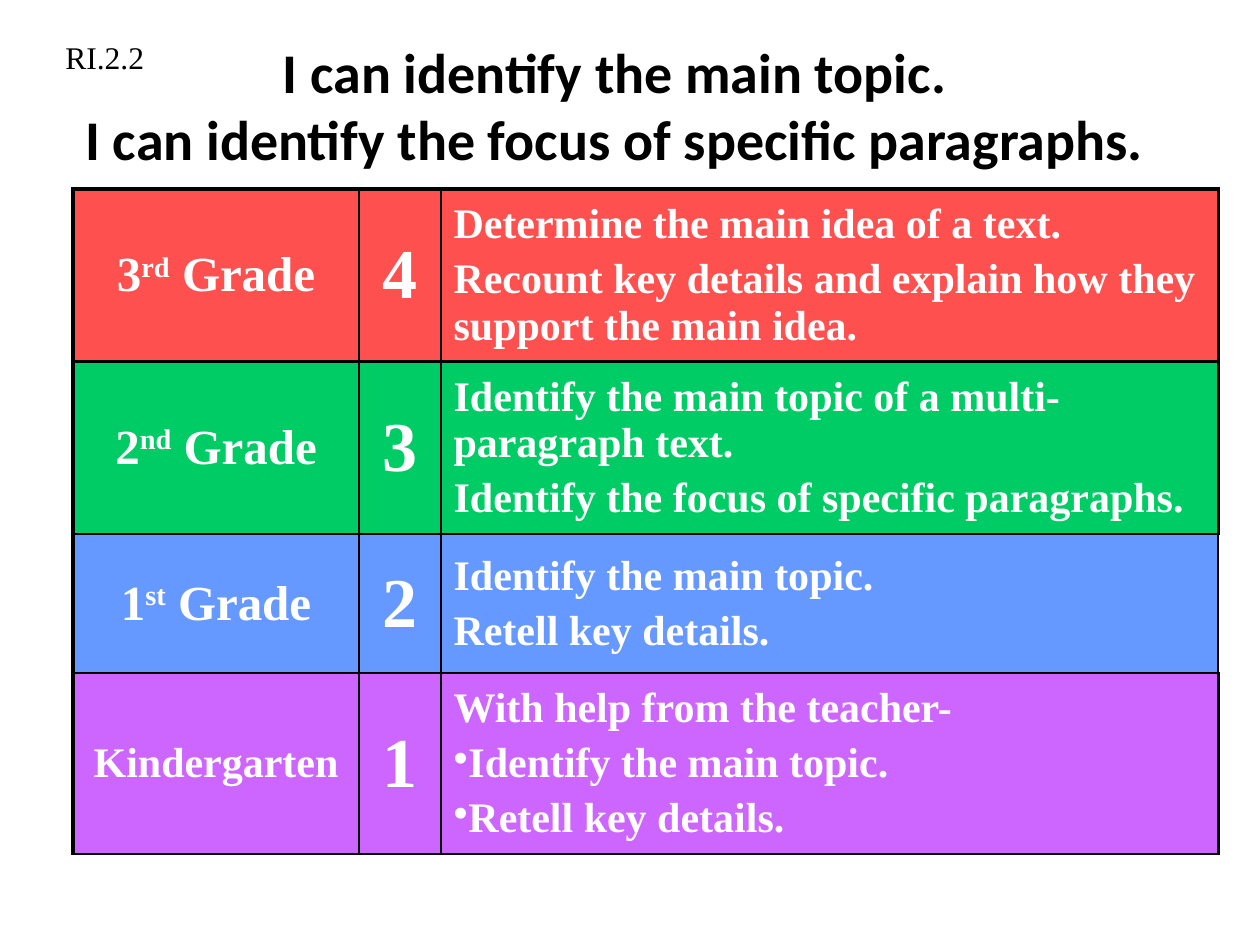
import pptx
import pptx.util
import pptx.dml.color
import pptx.enum.text
import pptx.oxml.ns
import lxml.etree as etree

Inches, Pt = pptx.util.Inches, pptx.util.Pt
RGBColor = pptx.dml.color.RGBColor
PP_ALIGN = pptx.enum.text.PP_ALIGN
MIDDLE = pptx.enum.text.MSO_ANCHOR.MIDDLE
qn = pptx.oxml.ns.qn

BLACK = RGBColor(0, 0, 0)
WHITE = RGBColor(255, 255, 255)
RED = RGBColor(0xFF, 0x50, 0x50)
GREEN = RGBColor(0x00, 0xCC, 0x66)
BLUE = RGBColor(0x66, 0x99, 0xFF)
PURPLE = RGBColor(0xCC, 0x66, 0xFF)
SERIF = "Times New Roman"

# Content
STANDARD = "RI.2.2"
GOALS = "I can identify the main topic.\vI can identify the focus of specific paragraphs."
BULLET = "•"
# (grade parts: base, superscript, rest), grade size, score, skills, fill, row height
LEVELS = [
    (("3", "rd", " Grade"), 28, "4",
     ["Determine the main idea of a text.",
      "Recount key details and explain how they support the main idea."], RED, 1.26),
    (("2", "nd", " Grade"), 28, "3",
     ["Identify the main topic of a multi-paragraph text.",
      "Identify the focus of specific paragraphs."], GREEN, 1.28),
    (("1", "st", " Grade"), 28, "2",
     ["Identify the main topic.", "Retell key details."], BLUE, 1.1),
    (("Kindergarten",), 24, "1",
     ["With help from the teacher-", BULLET + "Identify the main topic.",
      BULLET + "Retell key details."], PURPLE, 1.34),
]
COLUMN_WIDTHS = [2.27, 0.65, 6.17]

# Border widths in points: lines between rows, and lines between columns per row
ROW_LINES = [2.25, 1.5, 1, 1, 1.5]
COLUMN_LINES = [[2.25, 1, 1, 2.25], [2.25, 1, 1, 2.25],
                [2.25, 1.5, 1.5, 1.5], [2.25, 1, 1, 2.25]]


def style(run, size, color, font=SERIF, bold=True):
    run.font.name, run.font.size, run.font.bold = font, Pt(size), bold
    run.font.color.rgb = color


def add_text(slide, text, box, size, font, bold, align):
    frame = slide.shapes.add_textbox(*map(Inches, box)).text_frame
    frame.word_wrap = True
    frame.text = text
    frame.paragraphs[0].alignment = align
    for run in frame.paragraphs[0].runs:
        style(run, size, BLACK, font, bold)
    return frame


def fill_cell(cell, paragraphs, size, align, color):
    """Each paragraph is a tuple of parts; the second part is superscript."""
    cell.fill.solid()
    cell.fill.fore_color.rgb = color
    cell.vertical_anchor = MIDDLE
    frame = cell.text_frame
    for i, parts in enumerate(paragraphs):
        paragraph = frame.paragraphs[0] if i == 0 else frame.add_paragraph()
        paragraph.alignment = align
        paragraph.space_before = Pt(5)
        if parts[0].startswith(BULLET):
            etree.SubElement(paragraph._p.get_or_add_pPr(), qn("a:buChar")).set("char", BULLET)
        for j, part in enumerate(parts):
            run = paragraph.add_run()
            run.text = part.removeprefix(BULLET)
            style(run, size, WHITE)
            if j == 1:
                run._r.get_or_add_rPr().set("baseline", "30000")


def set_borders(cell, row, column):
    widths = {"L": COLUMN_LINES[row][column], "R": COLUMN_LINES[row][column + 1],
              "T": ROW_LINES[row], "B": ROW_LINES[row + 1]}
    properties = cell._tc.get_or_add_tcPr()
    for i, (side, width) in enumerate(widths.items()):
        line = etree.Element(qn("a:ln" + side), w=str(Pt(width)))
        fill = etree.SubElement(line, qn("a:solidFill"))
        etree.SubElement(fill, qn("a:srgbClr"), val=str(BLACK))
        properties.insert(i, line)


def main():
    deck = pptx.Presentation()
    deck.slide_width, deck.slide_height = Inches(10), Inches(7.5)
    slide = deck.slides.add_slide(deck.slide_layouts[6])

    # Heading
    goals = add_text(slide, GOALS, (0.17, 0.33, 9.42, 1), 32, "Calibri", True, PP_ALIGN.CENTER)
    goals.vertical_anchor = MIDDLE

    # Grade scale
    heights = [level[-1] for level in LEVELS]
    scale = slide.shapes.add_table(
        len(LEVELS), len(COLUMN_WIDTHS), Inches(0.58), Inches(1.5),
        Inches(sum(COLUMN_WIDTHS)), Inches(sum(heights))).table
    scale.first_row = scale.horz_banding = False
    for column, width in zip(scale.columns, COLUMN_WIDTHS):
        column.width = Inches(width)
    for r, (grade, grade_size, score, skills, color, height) in enumerate(LEVELS):
        scale.rows[r].height = Inches(height)
        columns = [([grade], grade_size, PP_ALIGN.CENTER),
                   ([(score,)], 40, PP_ALIGN.CENTER),
                   ([(skill,) for skill in skills], 24, PP_ALIGN.LEFT)]
        for c, (paragraphs, size, align) in enumerate(columns):
            fill_cell(scale.cell(r, c), paragraphs, size, align, color)
            set_borders(scale.cell(r, c), r, c)

    # Standard code
    add_text(slide, STANDARD, (0.42, 0.25, 1.42, 0.4), 18, SERIF, False, PP_ALIGN.LEFT)
    deck.save("out.pptx")


if __name__ == "__main__":
    main()
